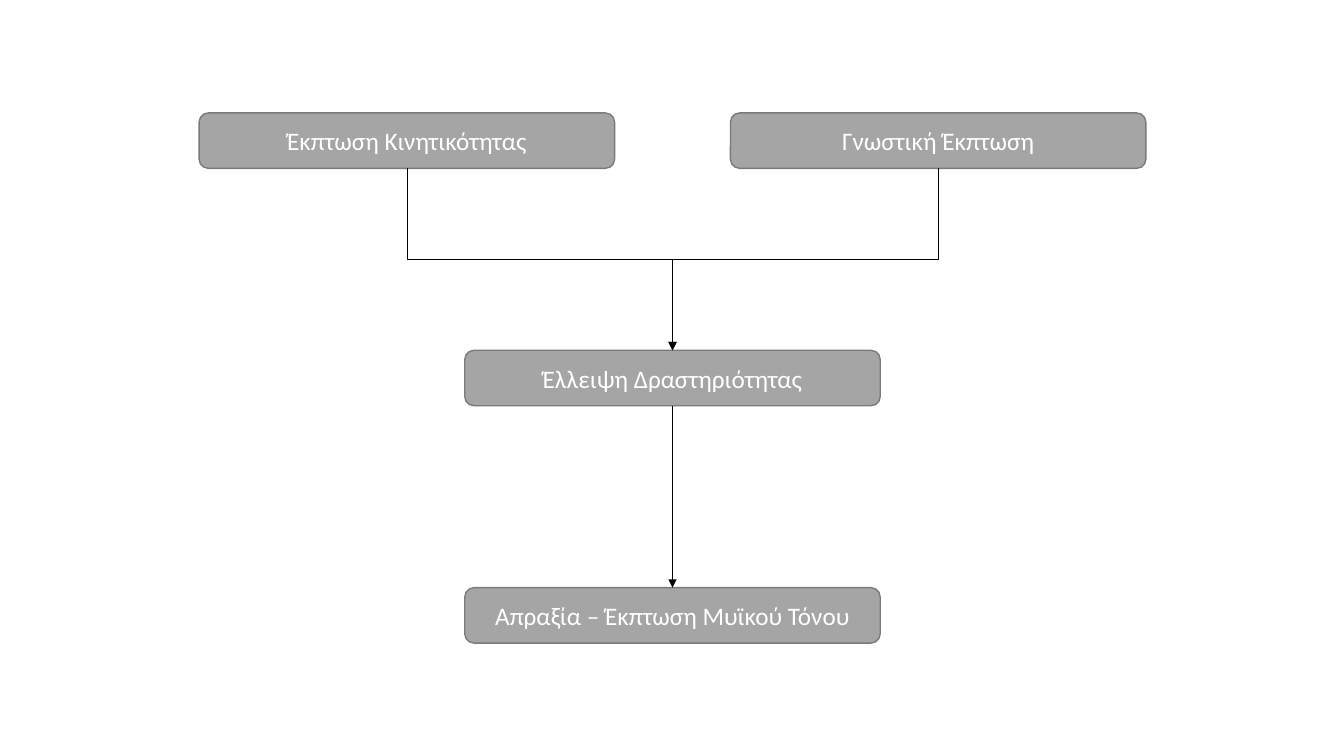
from pptx import Presentation
from pptx.dml.color import RGBColor
from pptx.enum.shapes import MSO_CONNECTOR, MSO_SHAPE
from pptx.enum.text import MSO_ANCHOR, PP_ALIGN
from pptx.oxml.ns import qn
from pptx.util import Inches, Pt
from lxml import etree

WHITE = RGBColor(0xFF, 0xFF, 0xFF)
GRAY = RGBColor(0xA5, 0xA5, 0xA5)
DARK_GRAY = RGBColor(0x7A, 0x7A, 0x7A)
BLACK = RGBColor(0, 0, 0)

SLIDE_WIDTH, SLIDE_HEIGHT = 13.33, 7.5
BOX_WIDTH, BOX_HEIGHT = 4.12, 0.55
CENTER = 6.67
SIDE_OFFSET = 2.635
FIRST_ROW, ROW_STEP = 1.12, 2.355
BOTTOM_SITE, TOP_SITE = 2, 0


def add_box(slide, text, center, row):
    shape = slide.shapes.add_shape(
        MSO_SHAPE.ROUNDED_RECTANGLE,
        Inches(center - BOX_WIDTH / 2), Inches(FIRST_ROW + row * ROW_STEP),
        Inches(BOX_WIDTH), Inches(BOX_HEIGHT))
    shape.shadow.inherit = False
    shape.fill.solid()
    shape.fill.fore_color.rgb = GRAY
    shape.line.color.rgb = DARK_GRAY
    shape.line.width = Pt(1)
    frame = shape.text_frame
    frame.word_wrap = True
    frame.vertical_anchor = MSO_ANCHOR.MIDDLE
    paragraph = frame.paragraphs[0]
    paragraph.alignment = PP_ALIGN.CENTER
    run = paragraph.add_run()
    run.text = text
    for name, value in {"name": "Calibri", "size": Pt(18)}.items():
        setattr(run.font, name, value)
    run.font.color.rgb = WHITE
    return shape


def turn_elbow(connector):
    """Turn an elbow a quarter so that it leaves and arrives vertically."""
    rightward = connector.end_x > connector.begin_x
    left, top = connector.left, connector.top
    width, height = connector.width, connector.height
    connector.left = left + (width - height) // 2
    connector.top = top + (height - width) // 2
    connector.width, connector.height = height, width
    transform = connector._element.spPr.find(qn("a:xfrm"))
    transform.set("rot", "16200000" if rightward else "5400000")
    transform.set("flipH", "1" if rightward else "0")


def add_arrow(slide, source, target, kind=MSO_CONNECTOR.STRAIGHT):
    """Draw an arrow from the bottom of one box to the top of another."""
    connector = slide.shapes.add_connector(kind, 0, 0, 0, 0)
    connector.begin_connect(source, BOTTOM_SITE)
    connector.end_connect(target, TOP_SITE)
    if kind == MSO_CONNECTOR.ELBOW:
        turn_elbow(connector)
    connector.line.color.rgb = BLACK
    connector.line.width = Pt(0.5)
    etree.SubElement(connector.line._get_or_add_ln(), qn("a:tailEnd"), type="triangle")
    etree.SubElement(connector._element.spPr, qn("a:effectLst"))


def main():
    presentation = Presentation()
    presentation.slide_width = Inches(SLIDE_WIDTH)
    presentation.slide_height = Inches(SLIDE_HEIGHT)
    slide = presentation.slides.add_slide(presentation.slide_layouts[6])

    mobility = add_box(slide, "Έκπτωση Κινητικότητας", CENTER - SIDE_OFFSET, 0)
    apraxia = add_box(slide, "Απραξία – Έκπτωση Μυϊκού Τόνου", CENTER, 2)
    inactivity = add_box(slide, "Έλλειψη Δραστηριότητας", CENTER, 1)
    cognition = add_box(slide, "Γνωστική Έκπτωση", CENTER + SIDE_OFFSET, 0)

    for cause in (mobility, cognition):
        add_arrow(slide, cause, inactivity, MSO_CONNECTOR.ELBOW)
    add_arrow(slide, inactivity, apraxia)

    presentation.save("out.pptx")


if __name__ == "__main__":
    main()
